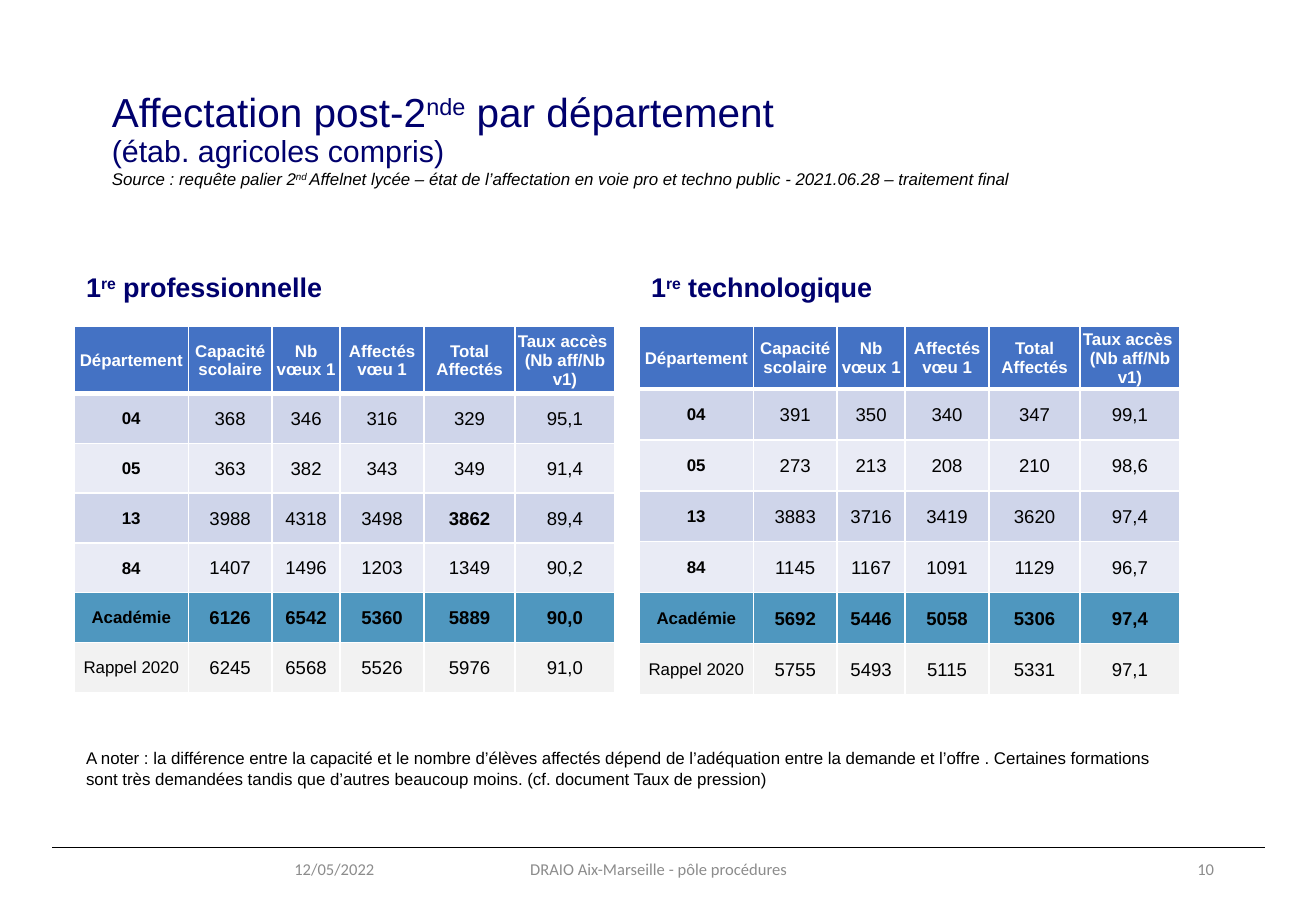
"""Build the slide on assignments after the 2nde by department."""
from lxml import etree
from pptx import Presentation
from pptx.dml.color import RGBColor as Rgb
from pptx.enum.shapes import MSO_CONNECTOR as Link
from pptx.enum.text import MSO_ANCHOR as Anchor, MSO_AUTO_SIZE as Auto, PP_ALIGN as Align
from pptx.oxml.ns import qn
from pptx.util import Inches, Pt

COLORS = {
    "navy": "00006D", "black": "000000", "white": "FFFFFF", "grey": "8C8C8C",
    "head": "4472C4", "dark": "CFD5EA", "light": "E9EBF5",
    "total": "4F97BF", "past": "F2F2F2",
}
TITLE = [
    ("Affectation post-2^nde^ par département", 24, "navy"),
    ("(étab. agricoles compris)", 18, "navy"),
    ("Source : requête palier 2^nd ^Affelnet lycée – état de l’affectation en voie pro "
     "et techno public - 2021.06.28 – traitement final", 10, "black"),
]
HEAD = ["Département", "Capacité scolaire", "Nb vœux 1", "Affectés vœu 1",
        "Total Affectés", "Taux accès \n(Nb aff/Nb v1)"]
LABELS = ["04", "05", "13", "84", "Académie", "Rappel 2020"]
FILLS = ["head", "dark", "light", "dark", "light", "total", "past"]
WIDTHS = [0.94, 0.69, 0.56, 0.69, 0.75, 0.82]
TABLES = [
    {"name": "1^re^ professionnelle", "left": 0.61, "width": 2.19, "rows": (0.55, 0.41),
     "bold": [(3, 4)],
     "data": ["368 346 316 329 95,1", "363 382 343 349 91,4",
              "3988 4318 3498 3862 89,4", "1407 1496 1203 1349 90,2",
              "6126 6542 5360 5889 90,0", "6245 6568 5526 5976 91,0"]},
    {"name": "1^re^ technologique", "left": 5.26, "width": 2.06, "rows": (0.42, 0.42),
     "bold": [],
     "data": ["391 350 340 347 99,1", "273 213 208 210 98,6",
              "3883 3716 3419 3620 97,4", "1145 1167 1091 1129 96,7",
              "5692 5446 5058 5306 97,4", "5755 5493 5115 5331 97,1"]},
]
NOTE = ("A noter : la différence entre la capacité et le nombre d’élèves affectés dépend de "
        "l’adéquation entre la demande et l’offre . Certaines formations sont très demandées "
        "tandis que d’autres beaucoup moins. (cf. document Taux de pression)")
FOOTER = [
    ("12/05/2022", 0.74, 2.44, Align.RIGHT),
    ("DRAIO Aix-Marseille - pôle procédures", 3.59, 3.66, Align.CENTER),
    ("10", 7.65, 2.44, Align.RIGHT),
]


def write(para, text, size, color, bold=False, italic=False, face="Arial", align=Align.LEFT):
    para.alignment = align
    for i, part in enumerate(text.split("^")):
        run = para.add_run()
        run.text = part
        if i % 2:
            run.font._element.set("baseline", "30000")
    font = para.font
    font.name, font.size, font.bold, font.italic = face, Pt(size), bold, italic
    font.color.rgb = Rgb.from_string(COLORS[color])


def add_text(slide, box, text, size, color, wrap=True, anchor=Anchor.TOP, **style):
    frame = slide.shapes.add_textbox(*map(Inches, box)).text_frame
    frame.word_wrap, frame.vertical_anchor = wrap, anchor
    write(frame.paragraphs[0], text, size, color, **style)


def add_edges(cell, row):
    props = cell._tc.get_or_add_tcPr()
    for side in "LRTB":
        thick = (row, side) in [(0, "B"), (1, "T")]
        line = etree.SubElement(props, qn("a:ln" + side), w=str(Pt(3 if thick else 1)))
        paint = etree.SubElement(line, qn("a:solidFill"))
        etree.SubElement(paint, qn("a:srgbClr"), val=COLORS["white"])


def fill_cell(cell, text, row, col, bold):
    add_edges(cell, row)
    cell.fill.solid()
    cell.fill.fore_color.rgb = Rgb.from_string(COLORS[FILLS[row]])
    cell.vertical_anchor = Anchor.MIDDLE
    cell.margin_left = cell.margin_right = cell.margin_top = Inches(0.01)
    cell.margin_bottom = 0
    frame = cell.text_frame
    for i, line in enumerate(text.split("\n")):
        para = frame.add_paragraph() if i else frame.paragraphs[0]
        write(para, line, 11 if row and col else 10, "black" if row else "white",
              bold=bold, align=Align.CENTER)


def add_grid(slide, item):
    rows = [HEAD] + [[name, *line.split()] for name, line in zip(LABELS, item["data"])]
    first, rest = item["rows"]
    box = (item["left"], 2.69, sum(WIDTHS), first + rest * len(LABELS))
    table = slide.shapes.add_table(len(rows), len(HEAD), *map(Inches, box)).table
    for col, width in zip(table.columns, WIDTHS):
        col.width = Inches(width)
    for r, texts in enumerate(rows):
        table.rows[r].height = Inches(rest if r else first)
        for c, text in enumerate(texts):
            bold = FILLS[r] in ("head", "total") or (c == 0 and FILLS[r] != "past")
            fill_cell(table.cell(r, c), text, r, c, bold or (r, c) in item["bold"])


def add_title(slide):
    title = slide.shapes.title
    title.left, title.top, title.width, title.height = map(Inches, (0.92, 0.76, 8.85, 1.05))
    frame = title.text_frame
    frame.margin_left = frame.margin_top = frame.margin_right = frame.margin_bottom = 0
    frame.word_wrap, frame.auto_size, frame.vertical_anchor = True, Auto.NONE, Anchor.TOP
    for i, (text, size, color) in enumerate(TITLE):
        para = frame.add_paragraph() if i else frame.paragraphs[0]
        last = i == len(TITLE) - 1
        para.line_spacing = 1.0 if last else 0.9
        write(para, text, size, color, italic=last)


def add_rule(slide):
    ends = map(Inches, (0.43, 6.98, 10.41, 6.98))
    rule = slide.shapes.add_connector(Link.STRAIGHT, *ends)
    rule.line.color.rgb = Rgb.from_string(COLORS["black"])
    rule.line.width = Pt(0.8)
    etree.SubElement(rule._element.spPr, qn("a:effectLst"))


def main():
    deck = Presentation()
    deck.slide_width, deck.slide_height = Inches(10.83), Inches(7.5)
    slide = deck.slides.add_slide(deck.slide_layouts[5])
    add_rule(slide)
    add_title(slide)
    for item in TABLES:
        add_grid(slide, item)
        add_text(slide, (item["left"], 2.18, item["width"], 0.37), item["name"],
                 16, "navy", wrap=False, bold=True)
    add_text(slide, (0.61, 6.11, 9.1, 0.44), NOTE, 10, "black")
    for text, left, width, align in FOOTER:
        add_text(slide, (left, 6.95, width, 0.4), text, 9.8, "grey",
                 anchor=Anchor.MIDDLE, face="Calibri", align=align)
    deck.save("out.pptx")


if __name__ == "__main__":
    main()
